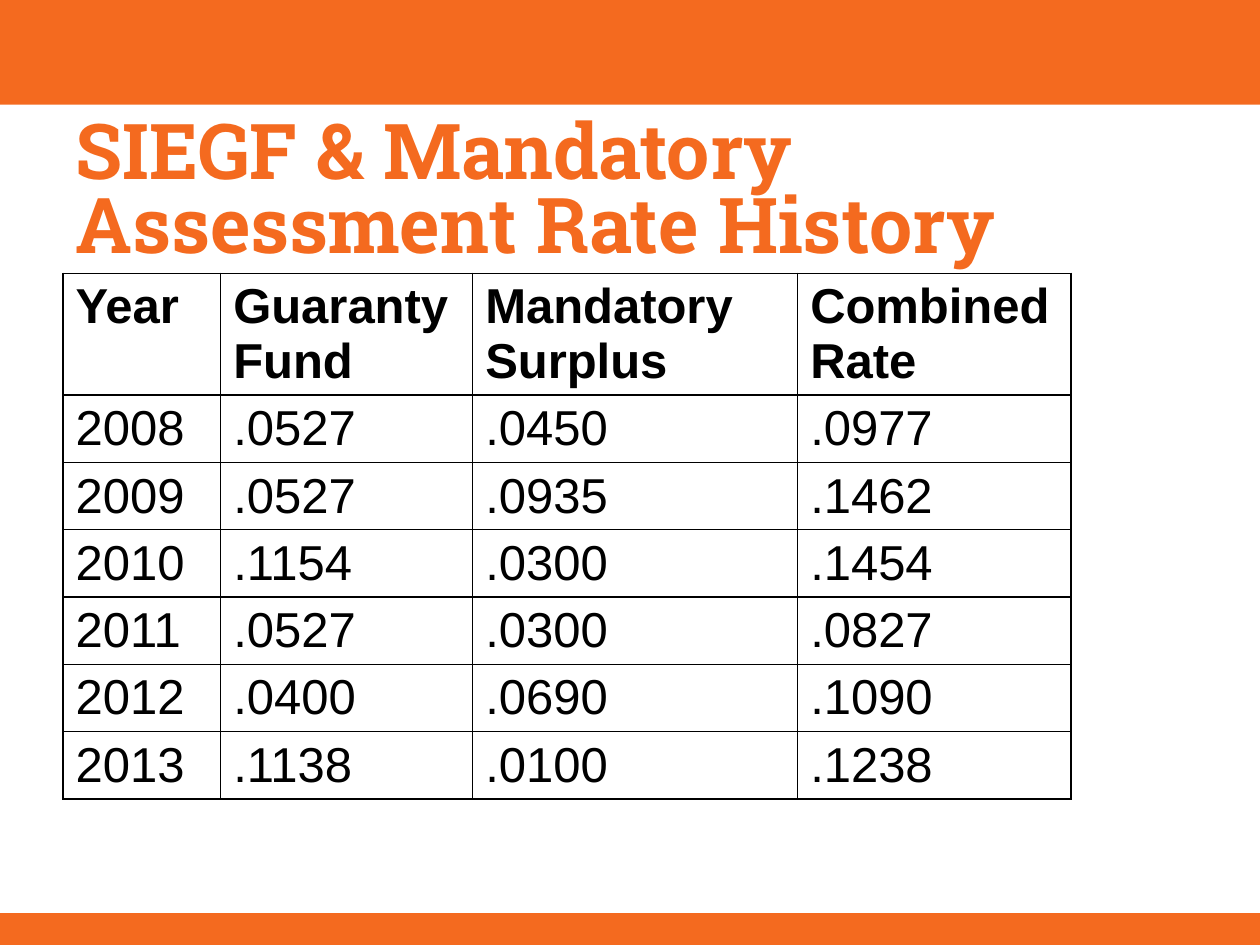
import pptx
import pptx.dml.color
import pptx.enum.shapes
import pptx.enum.text
import pptx.oxml
import pptx.oxml.ns
import pptx.util
from pptx.util import Cm

ORANGE = "F46A1F"
BLACK = "000000"
PAGE_WIDTH, PAGE_HEIGHT = Cm(25.4), Cm(19.05)

HEADINGS = ["Year", "Guaranty Fund", "Mandatory Surplus", "Combined Rate"]
RATES = [
    ["2008", ".0527", ".0450", ".0977"],
    ["2009", ".0527", ".0935", ".1462"],
    ["2010", ".1154", ".0300", ".1454"],
    ["2011", ".0527", ".0300", ".0827"],
    ["2012", ".0400", ".0690", ".1090"],
    ["2013", ".1138", ".0100", ".1238"],
]
COLUMN_WIDTHS = [Cm(3.18), Cm(5.08), Cm(6.55), Cm(5.51)]
ROW_HEIGHT = Cm(1.04)  # minimum; rows grow to fit their text


def colour(hex_string):
    return pptx.dml.color.RGBColor.from_string(hex_string)


def style_font(font, name, size, hex_string, bold):
    font.name = name
    font.size = pptx.util.Pt(size)
    font.bold = bold
    font.color.rgb = colour(hex_string)


def add_band(page, left, top, width, height):
    band = page.shapes.add_shape(
        pptx.enum.shapes.MSO_SHAPE.RECTANGLE, left, top, width, height)
    band.shadow.inherit = False
    band.fill.solid()
    band.fill.fore_color.rgb = colour(ORANGE)
    band.line.fill.background()


def place_title(page, text, left, top, width, height):
    title = page.shapes.title
    title.left, title.top, title.width, title.height = left, top, width, height
    frame = title.text_frame
    frame.text = text
    frame.word_wrap = True
    frame.auto_size = pptx.enum.text.MSO_AUTO_SIZE.NONE
    frame.vertical_anchor = pptx.enum.text.MSO_ANCHOR.MIDDLE
    para = frame.paragraphs[0]
    para.alignment = pptx.enum.text.PP_ALIGN.LEFT
    para.line_spacing = pptx.util.Pt(42)
    style_font(para.font, "Roboto Slab", 44, ORANGE, True)


def add_borders(cell):
    # Borders must come before the fill in the cell properties
    properties = cell._tc.get_or_add_tcPr()
    for position, side in enumerate(["lnL", "lnR", "lnT", "lnB"]):
        border = pptx.oxml.parse_xml(
            f'<a:{side} {pptx.oxml.ns.nsdecls("a")} w="12700"><a:solidFill>'
            f'<a:srgbClr val="{BLACK}"/></a:solidFill></a:{side}>')
        properties.insert(position, border)


def add_rate_table(page, left, top, width, height):
    records = [HEADINGS] + RATES
    holder = page.shapes.add_table(
        len(records), len(HEADINGS), left, top, width, height)
    table = holder.table
    table.horz_banding = False
    for column, column_width in zip(table.columns, COLUMN_WIDTHS):
        column.width = column_width
    for row_index, (row, record) in enumerate(zip(table.rows, records)):
        row.height = ROW_HEIGHT
        for cell, text in zip(row.cells, record):
            cell.text = text
            cell.fill.background()
            add_borders(cell)
            style_font(cell.text_frame.paragraphs[0].font,
                       "Arial", 28, BLACK, row_index == 0)
    holder.height = height


def main():
    deck = pptx.Presentation()
    deck.slide_width, deck.slide_height = PAGE_WIDTH, PAGE_HEIGHT
    page = deck.slides.add_slide(deck.slide_layouts.get_by_name("Title Only"))

    # Top and bottom bands
    add_band(page, 0, 0, PAGE_WIDTH, Cm(2.11))
    footer_height = Cm(0.64)
    add_band(page, 0, PAGE_HEIGHT - footer_height, PAGE_WIDTH, footer_height)

    # Title and rate history
    place_title(page, "SIEGF & Mandatory Assessment Rate History",
                Cm(1.27), Cm(2.34), Cm(22.86), Cm(3.18))
    add_rate_table(page, Cm(1.27), Cm(5.51), sum(COLUMN_WIDTHS), Cm(11.25))

    deck.save("out.pptx")


if __name__ == "__main__":
    main()
